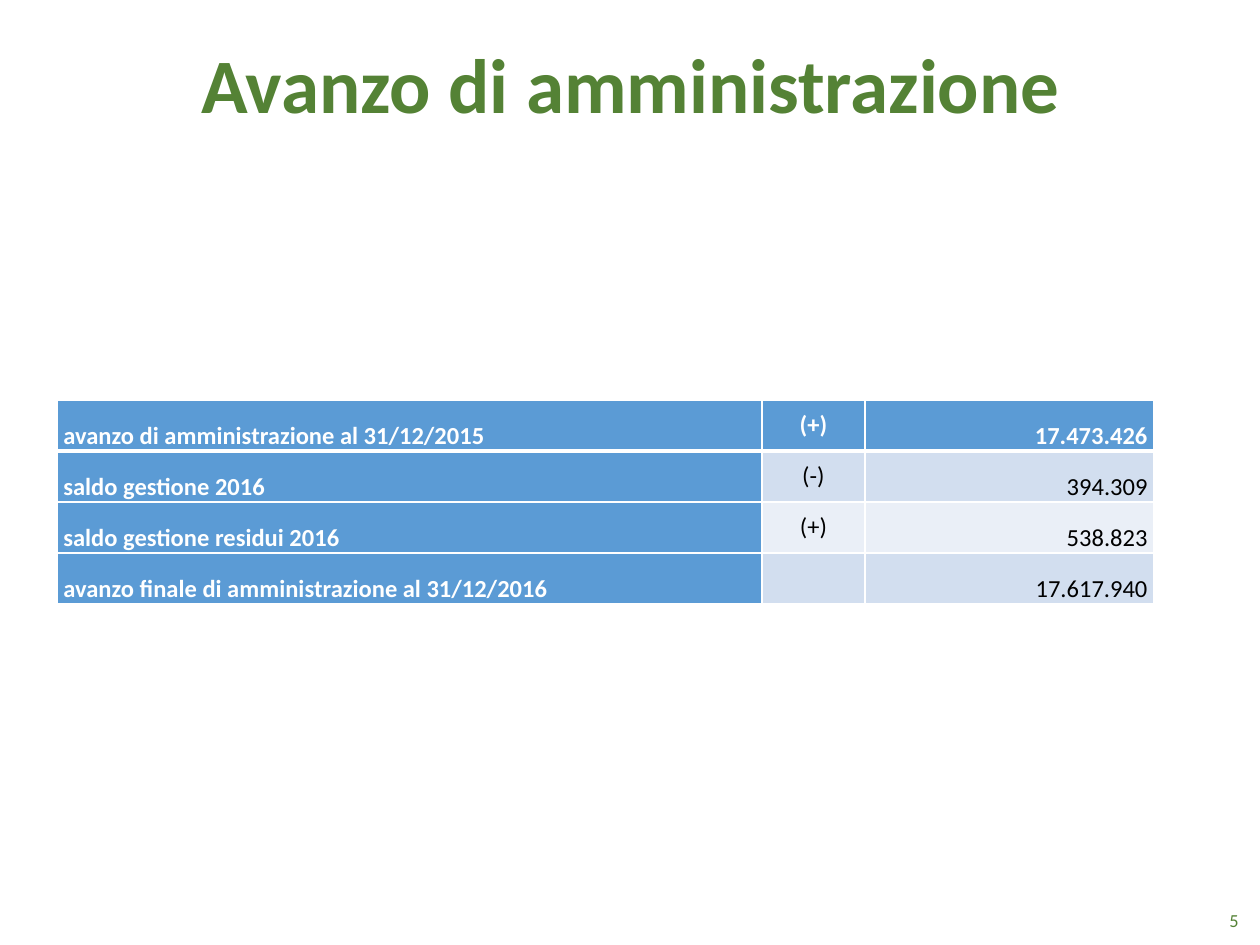
from typing import NamedTuple

from lxml import etree
from pptx import Presentation
from pptx import util as u
from pptx.dml.color import RGBColor
from pptx.enum import text
from pptx.oxml.ns import qn

PX_PER_INCH = 126
COLORS = {
    "green": "548235",
    "blue": "5B9BD5",
    "band_dark": "D2DEEF",
    "band_light": "EAEFF7",
    "white": "FFFFFF",
    "black": "000000",
}
ALIGN = text.PP_ALIGN
ANCHOR = text.MSO_ANCHOR


class Entry(NamedTuple):
    label: str
    sign: str
    amount: str


class Column(NamedTuple):
    width: int
    align: ALIGN
    anchor: ANCHOR


ENTRIES = [
    Entry("avanzo di amministrazione al 31/12/2015", "(+)", "17.473.426"),
    Entry("saldo gestione 2016", "(-)", "394.309"),
    Entry("saldo gestione residui 2016", "(+)", "538.823"),
    Entry("avanzo finale di amministrazione al 31/12/2016", "", "17.617.940"),
]
COLUMNS = [
    Column(705, ALIGN.LEFT, ANCHOR.BOTTOM),
    Column(103, ALIGN.CENTER, ANCHOR.MIDDLE),
    Column(289, ALIGN.RIGHT, ANCHOR.BOTTOM),
]
ROW_HEIGHT = 51


def px(length: int) -> int:
    return round(length * u.Inches(1) / PX_PER_INCH)


def rgb(name: str) -> RGBColor:
    return RGBColor.from_string(COLORS[name])


def write(frame, content: str, size: float, color: str, bold: bool, align) -> None:
    frame.text = content
    paragraph = frame.paragraphs[0]
    paragraph.alignment = align
    font = paragraph.runs[0].font if paragraph.runs else paragraph.font
    font.name, font.size, font.bold = "Calibri", u.Pt(size), bold
    font.color.rgb = rgb(color)


def set_borders(cell, bottom: float) -> None:
    """Draw white cell borders; they come before the fill in the cell's XML."""
    properties = cell._tc.get_or_add_tcPr()
    widths = {"a:lnL": 1, "a:lnR": 1, "a:lnT": 1, "a:lnB": bottom}
    for index, (side, width) in enumerate(widths.items()):
        line = etree.Element(qn(side), w=str(u.Pt(width)))
        fill = etree.SubElement(line, qn("a:solidFill"))
        etree.SubElement(fill, qn("a:srgbClr"), val=COLORS["white"])
        properties.insert(index, line)


def fill_cell(cell, content: str, column: Column, fill: str, header: bool,
              bottom: float) -> None:
    cell.margin_left = cell.margin_right = u.Inches(0.05)
    cell.margin_top = cell.margin_bottom = 0
    cell.vertical_anchor = column.anchor
    cell.fill.solid()
    cell.fill.fore_color.rgb = rgb(fill)
    write(cell.text_frame, content, 14, "white" if header else "black",
          header, column.align)
    set_borders(cell, bottom)


def add_balance_table(slide) -> None:
    table = slide.shapes.add_table(
        len(ENTRIES), len(COLUMNS), px(57), px(400),
        px(sum(column.width for column in COLUMNS)),
        px(ROW_HEIGHT * len(ENTRIES))).table
    for grid_column, column in zip(table.columns, COLUMNS):
        grid_column.width = px(column.width)
    for r, entry in enumerate(ENTRIES):
        table.rows[r].height = px(ROW_HEIGHT)
        band = "band_dark" if r % 2 else "band_light"
        for c, (content, column) in enumerate(zip(entry, COLUMNS)):
            header = r == 0 or c == 0
            fill_cell(table.cell(r, c), content, column,
                      "blue" if header else band, header, 3 if r == 0 else 1)


def main() -> None:
    prs = Presentation()
    prs.slide_width, prs.slide_height = u.Inches(10), u.Inches(7.5)
    slide = prs.slides.add_slide(prs.slide_layouts[5])

    # Title
    title = slide.shapes.title
    title.left, title.top, title.width, title.height = map(px, (47, 30, 1168, 106))
    write(title.text_frame, "Avanzo di amministrazione", 44, "green", True, ALIGN.CENTER)
    title.text_frame.vertical_anchor = ANCHOR.TOP
    title.text_frame.auto_size = text.MSO_AUTO_SIZE.NONE

    # Balance table
    add_balance_table(slide)

    # Page number
    page_number = slide.shapes.add_textbox(*map(px, (1208, 903, 52, 37)))
    page_number.text_frame.word_wrap = True
    write(page_number.text_frame, "5", 10.5, "green", False, ALIGN.CENTER)

    prs.save("out.pptx")


if __name__ == "__main__":
    main()
